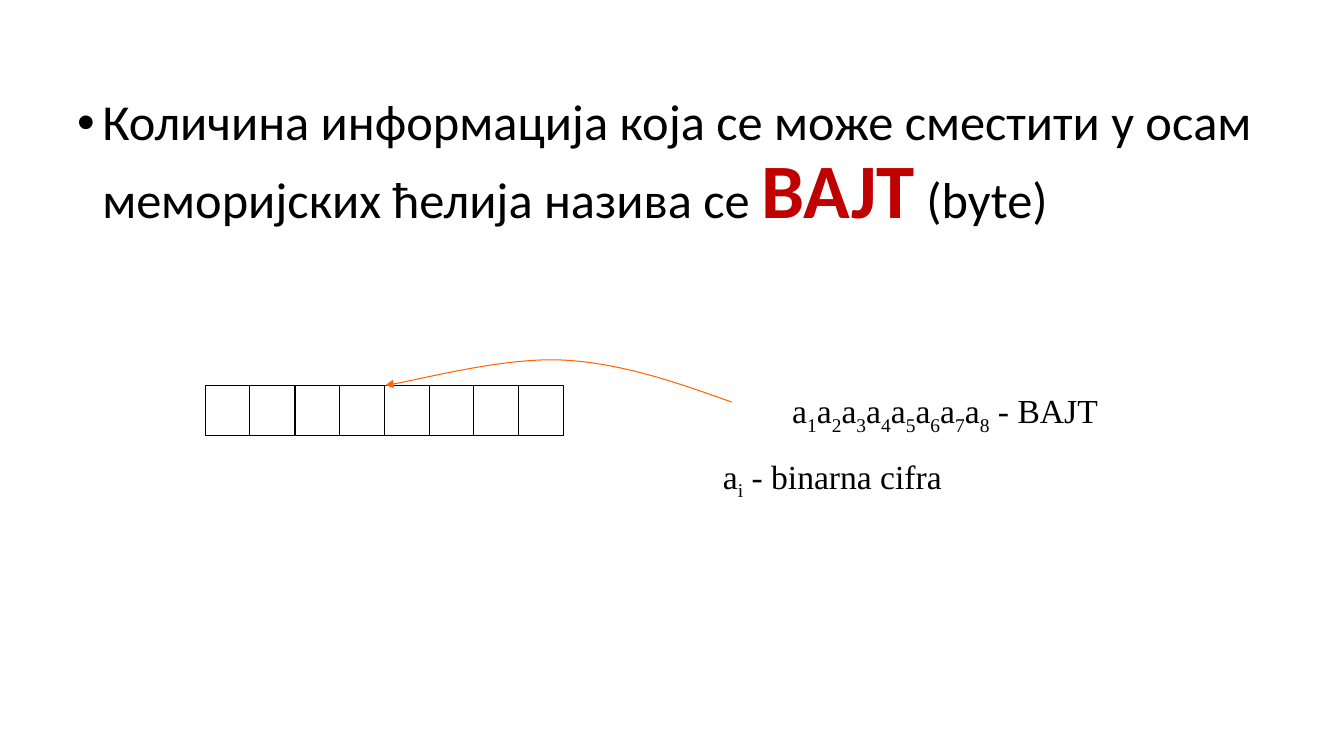
from dataclasses import dataclass

from lxml.etree import SubElement
from pptx import Presentation
from pptx.dml.color import RGBColor
from pptx.enum.shapes import MSO_SHAPE as Shape
from pptx.enum.text import PP_ALIGN as Align
from pptx.oxml.ns import qn
from pptx.slide import Slide
from pptx.text.text import TextFrame, _Paragraph as Paragraph
from pptx.util import Pt

PX = 9525
BLACK = RGBColor(0x00, 0x00, 0x00)
WHITE = RGBColor(0xFF, 0xFF, 0xFF)
RED = RGBColor(0xC0, 0x00, 0x00)
ORANGE = RGBColor(0xFF, 0x66, 0x00)
LINE_WIDTH = Pt(0.75)
BIT_COUNT = 8


@dataclass(frozen=True)
class Box:
    left: int
    top: int
    width: int
    height: int

    def emu(self) -> tuple[int, int, int, int]:
        return self.left * PX, self.top * PX, self.width * PX, self.height * PX


@dataclass(frozen=True)
class Phrase:
    text: str
    size: int = 36
    color: RGBColor = BLACK
    bold: bool = False


@dataclass(frozen=True)
class Symbol:
    text: str
    subscript: bool = False


DEFINITION_BOX = Box(64, 88, 1152, 547)
NOTATION_BOX = Box(665, 367, 470, 106)
MEMORY_ROW = Box(196, 367, 341, 48)
ARROW_POINTS = [(697, 383), (644, 364), (592, 346), (537, 343),
                (482, 340), (395, 363), (367, 367)]

DEFINITION = [
    Phrase("Количина информација која се може сместити у осам меморијских ћелија назива се "),
    Phrase("BAJT", 55, RED, True),
    Phrase(" (byte)"),
]
BYTE_NOTATION = [
    symbol
    for index in range(1, BIT_COUNT + 1)
    for symbol in (Symbol("a"), Symbol(str(index), True))
] + [Symbol(" - BAJT")]
DIGIT_NOTATION = [Symbol("a"), Symbol("i", True), Symbol(" - binarna cifra")]


def add_text_frame(slide: Slide, box: Box) -> TextFrame:
    frame = slide.shapes.add_textbox(*box.emu()).text_frame
    frame.word_wrap = True
    return frame


def set_indent(paragraph: Paragraph, left: int, first_line: int = 0) -> None:
    properties = paragraph._p.get_or_add_pPr()
    properties.set("marL", str(left * PX))
    properties.set("indent", str(first_line * PX))


def add_definition(slide: Slide) -> None:
    paragraph = add_text_frame(slide, DEFINITION_BOX).paragraphs[0]
    set_indent(paragraph, 24, -24)
    properties = paragraph._p.get_or_add_pPr()
    SubElement(properties, qn("a:buFont"), typeface="Arial")
    SubElement(properties, qn("a:buChar"), char="•")
    paragraph.line_spacing = 0.9
    paragraph.font.name = "Calibri"
    for phrase in DEFINITION:
        run = paragraph.add_run()
        run.text = phrase.text
        run.font.size = Pt(phrase.size)
        run.font.bold = phrase.bold
        run.font.color.rgb = phrase.color


def write_symbols(paragraph: Paragraph, symbols: list[Symbol]) -> None:
    paragraph.font.name = "Times New Roman"
    paragraph.font.size = Pt(24)
    paragraph.font.color.rgb = BLACK
    for symbol in symbols:
        run = paragraph.add_run()
        run.text = symbol.text
        if symbol.subscript:
            run._r.get_or_add_rPr().set("baseline", "-25000")


def add_notation(slide: Slide) -> None:
    frame = add_text_frame(slide, NOTATION_BOX)
    byte_line = frame.paragraphs[0]
    byte_line.alignment = Align.CENTER
    write_symbols(byte_line, BYTE_NOTATION)
    digit_line = frame.add_paragraph()
    set_indent(digit_line, 14)
    digit_line.space_before = Pt(14)
    write_symbols(digit_line, DIGIT_NOTATION)


def add_memory_cells(slide: Slide) -> None:
    row = MEMORY_ROW
    edges = [row.left + row.width * index // BIT_COUNT for index in range(BIT_COUNT + 1)]
    for left, right in zip(edges, edges[1:]):
        box = Box(left, row.top, right - left, row.height)
        cell = slide.shapes.add_shape(Shape.RECTANGLE, *box.emu())
        cell.shadow.inherit = False
        cell.fill.solid()
        cell.fill.fore_color.rgb = WHITE
        cell.line.color.rgb = BLACK
        cell.line.width = LINE_WIDTH


def add_curved_arrow(slide: Slide) -> None:
    builder = slide.shapes.build_freeform(*ARROW_POINTS[0], scale=PX)
    builder.add_line_segments(ARROW_POINTS[1:], close=False)
    arrow = builder.convert_to_shape()
    arrow.shadow.inherit = False
    arrow.fill.background()
    arrow.line.color.rgb = ORANGE
    arrow.line.width = LINE_WIDTH
    SubElement(arrow.line._get_or_add_ln(), qn("a:tailEnd"), type="triangle")

    outline = next(arrow._element.iter(qn("a:path")))
    segments = outline.findall(qn("a:lnTo"))
    for start in range(0, len(segments), 3):
        curve = SubElement(outline, qn("a:cubicBezTo"))
        for segment in segments[start:start + 3]:
            curve.append(segment[0])
            outline.remove(segment)


def main() -> None:
    presentation = Presentation()
    presentation.slide_width = 1280 * PX
    presentation.slide_height = 720 * PX
    slide = presentation.slides.add_slide(presentation.slide_layouts[6])
    add_definition(slide)
    add_notation(slide)
    add_memory_cells(slide)
    add_curved_arrow(slide)
    presentation.save("out.pptx")


if __name__ == "__main__":
    main()
